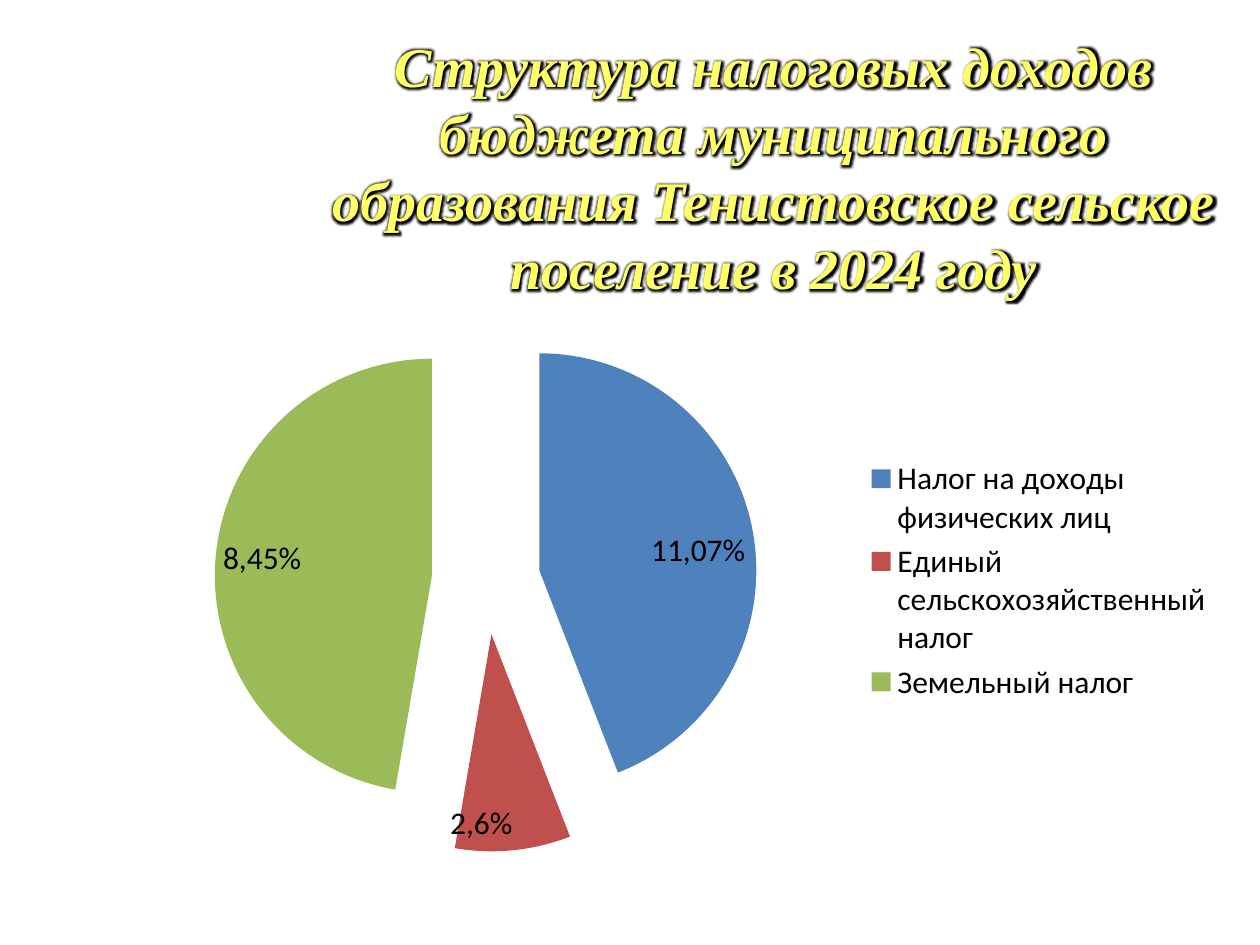
"""Build the slide on the structure of tax revenues."""
from lxml.etree import SubElement
from pptx import Presentation
from pptx.chart.data import CategoryChartData
from pptx.dml.color import RGBColor
from pptx.enum.chart import XL_CHART_TYPE, XL_LABEL_POSITION, XL_LEGEND_POSITION
from pptx.enum.text import MSO_AUTO_SIZE, PP_ALIGN
from pptx.oxml import parse_xml
from pptx.oxml.ns import nsdecls, qn
from pptx.util import Cm, Pt

TITLE = (
    "Структура налоговых доходов бюджета муниципального "
    "образования Тенистовское сельское поселение в 2024 году"
)
TAXES = [
    ("Налог на доходы физических лиц", 0.441, "11,07%", "4F81BD"),
    ("Единый сельскохозяйственный налог", 0.086, "2,6%", "C0504D"),
    ("Земельный налог", 0.473, "8,45%", "9BBB59"),
]
TITLE_BOX = (Cm(6.2), Cm(0.51), Cm(18.8), Cm(5.74))
CHART_BOX = (Cm(2.11), Cm(5.03), Cm(22.61), Cm(13.34))
PLOT_AREA = {"x": 0.06, "y": 0.09, "w": 0.56, "h": 0.82}
EXPLOSION = 25
THEME = {
    "title": {"font": "Times New Roman", "size": 32, "color": "FFFF66", "bold": True, "italic": True},
    "chart": {"font": "Calibri", "size": 18, "color": "000000"},
    "glow": {"color": "000000", "radius": Pt(5)},
}


def format_font(target, font, size, color, bold=False, italic=False):
    target.name = font
    target.size = Pt(size)
    target.bold = bold
    target.italic = italic
    target.color.rgb = RGBColor.from_string(color)


def write_text(text_frame, text, align=PP_ALIGN.CENTER, **style):
    paragraph = text_frame.paragraphs[0]
    paragraph.alignment = align
    run = paragraph.add_run()
    run.text = text
    format_font(run.font, **style)
    return run


def add_glow(run, color, radius):
    effects = parse_xml(
        f'<a:effectLst {nsdecls("a")}><a:glow rad="{radius}">'
        f'<a:srgbClr val="{color}"/></a:glow></a:effectLst>'
    )
    run.font.fill._xPr.find(qn("a:solidFill")).addnext(effects)


def add_title(slide):
    text_frame = slide.shapes.add_textbox(*TITLE_BOX).text_frame
    text_frame.word_wrap = True
    text_frame.auto_size = MSO_AUTO_SIZE.SHAPE_TO_FIT_TEXT
    add_glow(write_text(text_frame, TITLE, **THEME["title"]), **THEME["glow"])


def set_plot_layout(chart):
    plot_area = chart._chartSpace.chart.plotArea
    for layout in plot_area.findall(qn("c:layout")):
        plot_area.remove(layout)
    layout = parse_xml(f'<c:layout {nsdecls("c")}><c:manualLayout/></c:layout>')
    settings = {"layoutTarget": "inner", "xMode": "edge", "yMode": "edge", **PLOT_AREA}
    for name, value in settings.items():
        SubElement(layout[0], qn(f"c:{name}")).set("val", str(value))
    plot_area.insert(0, layout)


def add_pie(slide):
    names, shares, labels, colors = zip(*TAXES)
    chart_data = CategoryChartData(number_format="0.00%")
    chart_data.categories = names
    chart_data.add_series("Series 1", shares)
    chart = slide.shapes.add_chart(XL_CHART_TYPE.PIE, *CHART_BOX, chart_data).chart
    chart.has_title = False
    format_font(chart.font, **THEME["chart"])
    chart.has_legend = True
    chart.legend.position = XL_LEGEND_POSITION.RIGHT
    chart.legend.include_in_layout = False
    set_plot_layout(chart)

    plot = chart.plots[0]
    plot.vary_by_categories = True
    series = plot.series[0]
    series.data_labels.show_value = True
    series.data_labels.number_format = "0.00%"
    series.data_labels.number_format_is_linked = False
    for index, (label, color) in enumerate(zip(labels, colors)):
        point = series.points[index]
        point.format.fill.solid()
        point.format.fill.fore_color.rgb = RGBColor.from_string(color)
        write_text(point.data_label.text_frame, label, **THEME["chart"])
        point.data_label.position = XL_LABEL_POSITION.INSIDE_END
    explosion = parse_xml(f'<c:explosion {nsdecls("c")} val="{EXPLOSION}"/>')
    series._element.find(qn("c:dPt")).addprevious(explosion)


def main():
    presentation = Presentation()
    presentation.slide_width, presentation.slide_height = Cm(25.4), Cm(19.05)
    slide = presentation.slides.add_slide(presentation.slide_layouts[6])
    add_pie(slide)
    add_title(slide)
    presentation.save("out.pptx")


if __name__ == "__main__":
    main()
